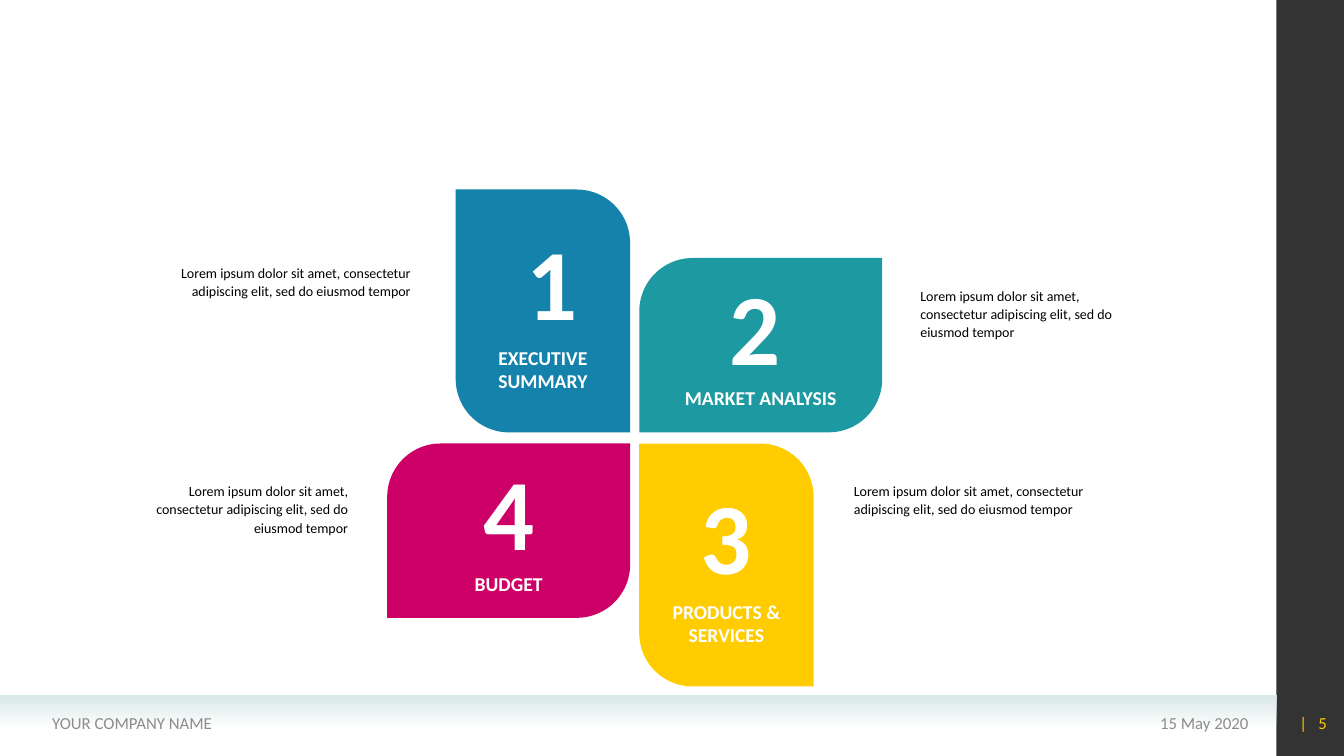
from dataclasses import dataclass

from pptx import Presentation
from pptx.dml.color import RGBColor
from pptx.enum.shapes import MSO_SHAPE
from pptx.enum.text import MSO_ANCHOR, PP_ALIGN
from pptx.oxml.ns import qn
from pptx.util import Inches, Pt

RECTANGLE = MSO_SHAPE.RECTANGLE
PETAL_SHAPE = MSO_SHAPE.ROUND_2_DIAG_RECTANGLE
TOP, MIDDLE = MSO_ANCHOR.TOP, MSO_ANCHOR.MIDDLE
LEFT, CENTER, RIGHT = PP_ALIGN.LEFT, PP_ALIGN.CENTER, PP_ALIGN.RIGHT

SLIDE_WIDTH, SLIDE_HEIGHT = 13.33, 7.5
SIDEBAR_WIDTH = 0.67
FOOTER_TOP = 6.9
FONT = "Calibri"
WHITE, BLACK, GREY, YELLOW, MIST = "FFFFFF", "000000", "8C8C8C", "FFCC00", "D9E9E8"

# The petals meet at a cross of two narrow gaps.
CROSS_LEFT, CROSS_RIGHT = 6.25, 6.34
CROSS_TOP, CROSS_BOTTOM = 4.29, 4.4
LONG, SHORT, CORNER = 2.41, 1.73, 0.53
NOTE = "Lorem ipsum dolor sit amet, consectetur adipiscing elit, sed do eiusmod tempor"


@dataclass
class Petal:
    number: str
    heading: list
    color: str
    on_left: bool
    on_top: bool
    tall: bool
    note_gap: float
    note_drop: float
    number_shift: float = 0


PETALS = [
    Petal("1", ["EXECUTIVE", "SUMMARY"], "1482AB", True, True, True, 0.35, 0.68, 0.09),
    Petal("2", ["MARKET ANALYSIS"], "1D9AA1", False, True, False, 0.28, 0.23, -0.06),
    Petal("3", ["PRODUCTS &", "SERVICES"], YELLOW, False, False, True, 0.3, 0.33),
    Petal("4", ["BUDGET"], "CC0066", True, False, False, 0.29, 0.33),
]


def rgb(color):
    return RGBColor.from_string(color)


def set_alpha(color_element, percent):
    alpha = color_element.makeelement(qn("a:alpha"), {"val": str(percent * 1000)})
    color_element.append(alpha)


def add_block(slide, kind, box, color):
    """Add a borderless, shadowless filled shape."""
    block = slide.shapes.add_shape(kind, *map(Inches, box))
    block.shadow.inherit = False
    block.line.fill.background()
    block.fill.solid()
    block.fill.fore_color.rgb = rgb(color)
    return block


def add_text(slide, box, lines, size, color, align=LEFT, anchor=TOP,
             bold=False, wrap=True, spacing=None):
    frame = slide.shapes.add_textbox(*map(Inches, box)).text_frame
    frame.word_wrap = wrap
    frame.vertical_anchor = anchor
    for index, line in enumerate(lines):
        para = frame.add_paragraph() if index else frame.paragraphs[0]
        para.alignment = align
        if spacing:
            para.line_spacing = Pt(spacing)
        span = para.add_run()
        span.text = line
        span.font.name = FONT
        span.font.size = Pt(size)
        span.font.bold = bold
        span.font.color.rgb = rgb(color)


def add_footer(slide, box):
    left, top, width, height = box
    band = add_block(slide, RECTANGLE, box, MIST)
    band.fill.gradient()
    band.fill.gradient_angle = 270
    for stop in band.fill.gradient_stops:
        stop.color.rgb = rgb(MIST)
    colors = list(band.element.spPr.iter(qn("a:srgbClr")))
    set_alpha(colors[-1], 0)

    text_top, text_height = top + 0.07, 0.4
    right = left + width
    entries = [
        (left + 0.42, 4.9, "YOUR COMPANY NAME", GREY, LEFT),
        (right - 3.57, 3.39, "15 May 2020", GREY, RIGHT),
        (right - 0.07, 0.67, "|   5", YELLOW, RIGHT),
    ]
    for text_left, text_width, words, color, align in entries:
        add_text(slide, (text_left, text_top, text_width, text_height), [words],
                 12, color, align, MIDDLE)


def add_sidebar(slide, box):
    sidebar = add_block(slide, RECTANGLE, box, BLACK)
    set_alpha(next(sidebar.element.spPr.iter(qn("a:srgbClr"))), 80)


def petal_box(petal):
    """Place a petal so that its inner corner touches the cross."""
    width, height = (SHORT, LONG) if petal.tall else (LONG, SHORT)
    left = CROSS_LEFT - width if petal.on_left else CROSS_RIGHT
    top = CROSS_TOP - height if petal.on_top else CROSS_BOTTOM
    return left, top, width, height


def add_petal(slide, petal, box):
    left, top, width, height = box
    leaf = add_block(slide, PETAL_SHAPE, box, petal.color)
    # First adjustment: top left and bottom right; second: the other diagonal.
    leaf.adjustments[0] = 0 if petal.tall else CORNER / SHORT
    leaf.adjustments[1] = CORNER / SHORT if petal.tall else 0

    number_drop, heading_drop = (0.24, 1.5) if petal.tall else (0.01, 1.22)
    add_text(slide, (left + petal.number_shift, top + number_drop, width, 1.31),
             [petal.number], 72, WHITE, CENTER, MIDDLE, bold=True)
    add_text(slide, (left, top + heading_drop, width, 0.1 + 0.24 * len(petal.heading)),
             petal.heading, 14, WHITE, CENTER, bold=True, wrap=False)

    note_width = 2.51 if petal.tall else 2.18
    if petal.on_left:
        note_left, align = left - petal.note_gap - note_width, RIGHT
    else:
        note_left, align = left + width + petal.note_gap, LEFT
    add_text(slide, (note_left, top + petal.note_drop, note_width, 0.63),
             [NOTE], 10, BLACK, align, spacing=12.9)


def main():
    deck = Presentation()
    deck.slide_width, deck.slide_height = Inches(SLIDE_WIDTH), Inches(SLIDE_HEIGHT)
    page = deck.slides.add_slide(deck.slide_layouts[6])
    content_width = SLIDE_WIDTH - SIDEBAR_WIDTH
    add_sidebar(page, (content_width, 0, SIDEBAR_WIDTH, SLIDE_HEIGHT))
    add_footer(page, (0, FOOTER_TOP, content_width, 0.31))
    for petal in PETALS:
        add_petal(page, petal, petal_box(petal))
    deck.save("out.pptx")


if __name__ == "__main__":
    main()
